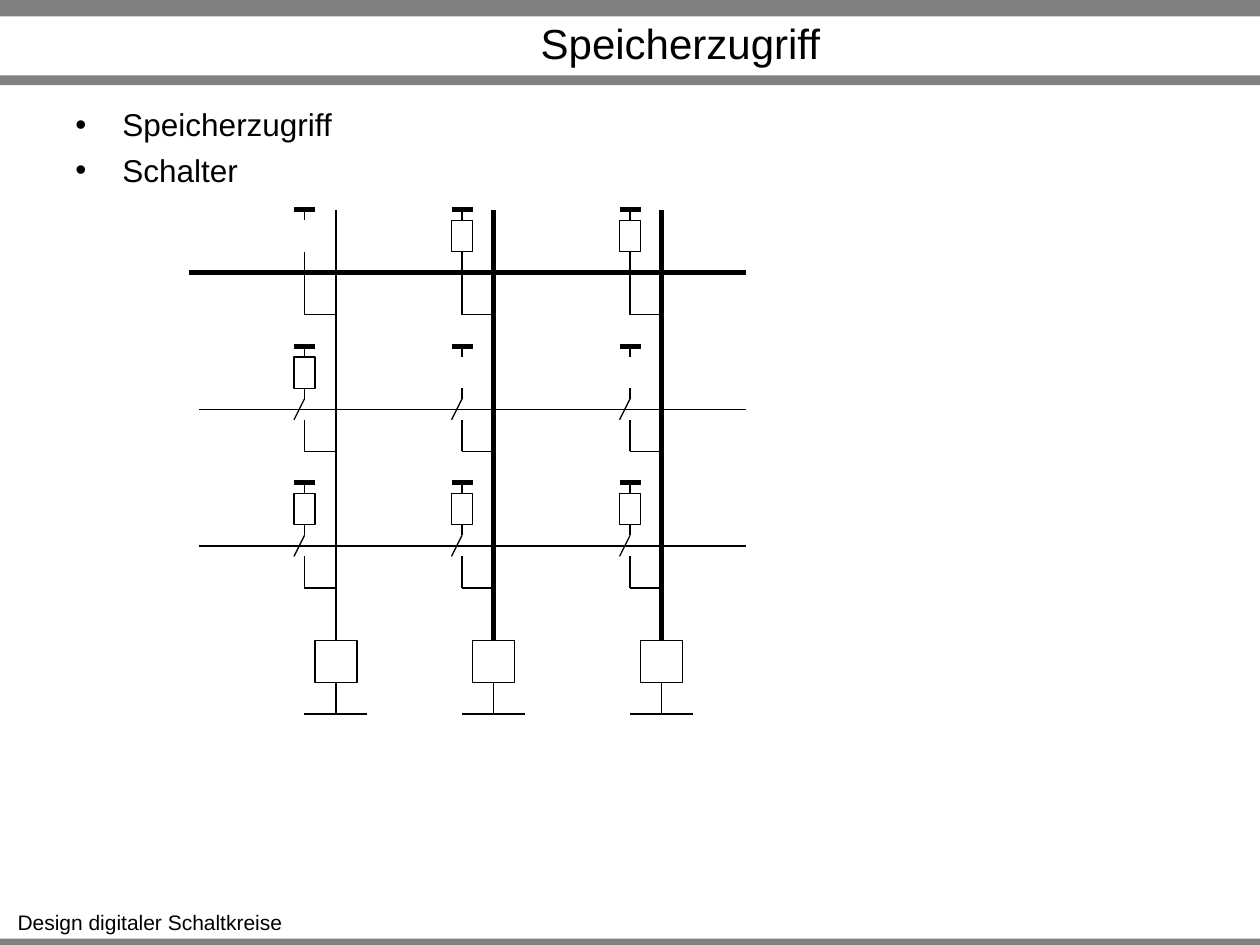
from dataclasses import dataclass

from lxml import etree
from pptx import Presentation
from pptx import util as u
from pptx.dml.color import RGBColor
from pptx.enum import shapes, text
from pptx.oxml import ns


@dataclass(frozen=True)
class Theme:
    """Colours, font, type sizes and line widths of the slide."""
    ink: RGBColor = RGBColor(0x00, 0x00, 0x00)
    bar: RGBColor = RGBColor(0x80, 0x80, 0x80)
    font: str = "Arial"
    title: float = 24
    body: float = 18
    footer: float = 12
    thin: float = 0.75
    thick: float = 3


@dataclass(frozen=True)
class Box:
    """A region in centimetres."""
    left: float
    top: float
    width: float
    height: float

    def lengths(self):
        """Return the four sides as lengths."""
        return [u.Cm(side) for side in (self.left, self.top, self.width, self.height)]


THEME = Theme()
WORD_LINES = [(0, True), (1, False), (1, False)]
BIT_LINES = [(14, False), (29, True), (45, True)]
RESISTORS = [(False, True, True), (True, False, False), (True, True, True)]
ROW_PITCH = 13
GRID_WIDTH = 53


def write(para, content, size, align=None, bullet=None, indent=0, before=0):
    """Format a paragraph and put one span of text in it."""
    if bullet:
        props = para._p.get_or_add_pPr()
        props.set("marL", str(u.Cm(indent)))
        props.set("indent", str(-u.Cm(indent)))
        etree.SubElement(props, ns.qn("a:buFont")).set("typeface", THEME.font)
        etree.SubElement(props, ns.qn("a:buChar")).set("char", bullet)
    para.space_before = u.Pt(before)
    para.alignment = align
    span = para.add_run()
    span.text = content
    span.font.name = THEME.font
    span.font.size = u.Pt(size)
    span.font.color.rgb = THEME.ink


def add_rect(page, box, fill=None):
    """Add a filled bar, or a thinly outlined rectangle."""
    rect = page.shapes.add_shape(shapes.MSO_SHAPE.RECTANGLE, *box.lengths())
    rect.shadow.inherit = False
    if fill is None:
        rect.fill.background()
        rect.line.color.rgb = THEME.ink
        rect.line.width = u.Pt(THEME.thin)
    else:
        rect.fill.solid()
        rect.fill.fore_color.rgb = fill
        rect.line.fill.background()
    return rect


class Circuit:
    """Draws circuit parts on a grid inside a box."""

    def __init__(self, page, box):
        """Fit the grid to the width of the box."""
        self.page, self.box = page, box
        self.step = box.width / GRID_WIDTH

    def wire(self, x1, y1, x2, y2, thick=False, source=None, target=None):
        """Draw a wire, joined below a source or on top of a target."""
        ends = [u.Cm(origin + self.step * value) for origin, value in (
            (self.box.left, x1), (self.box.top, y1),
            (self.box.left, x2), (self.box.top, y2))]
        line = self.page.shapes.add_connector(shapes.MSO_CONNECTOR.STRAIGHT, *ends)
        line.line.color.rgb = THEME.ink
        line.line.width = u.Pt(THEME.thick if thick else THEME.thin)
        etree.SubElement(line._element.spPr, ns.qn("a:effectLst"))
        if source is not None:
            line.begin_connect(source, 2)
        if target is not None:
            line.end_connect(target, 0)

    def rect(self, x, y, width, height):
        """Draw a rectangle given in grid steps."""
        return add_rect(self.page, Box(
            self.box.left + self.step * x, self.box.top + self.step * y,
            self.step * width, self.step * height))

    def cell(self, x, y, has_resistor, closed):
        """Draw a memory cell hanging from its supply at x, y."""
        resistor = self.rect(x - 1, y + 1, 2, 3) if has_resistor else None
        self.wire(x - 1, y, x + 1, y, thick=True)
        self.wire(x, y, x, y + 1, target=resistor)
        self.wire(x, y + 4, x, y + 5, source=resistor)
        self.wire(x, y + 5, x if closed else x - 1, y + 7)
        self.wire(x, y + 7, x, y + 10)
        self.wire(x, y + 10, x + 3, y + 10)

    def column(self, x, active):
        """Draw a bit line with its sense box and ground."""
        sensor = self.rect(x - 2, 41, 4, 4)
        self.wire(x, 0, x, 41, thick=active, target=sensor)
        self.wire(x, 45, x, 48, source=sensor)
        self.wire(x - 3, 48, x + 3, 48)


def draw_memory(page, box):
    """Draw the word lines, bit lines and cells of the memory."""
    circuit = Circuit(page, box)
    for x, active in BIT_LINES:
        circuit.column(x, active)
    for row, (start, selected) in enumerate(WORD_LINES):
        top = row * ROW_PITCH
        circuit.wire(start, top + 6, GRID_WIDTH, top + 6, thick=selected)
        for (x, _), has_resistor in zip(BIT_LINES, RESISTORS[row]):
            circuit.cell(x - 3, top, has_resistor, closed=selected)


def draw_frame(page, box):
    """Draw the grey bars and the footer."""
    for top, height in ((0, 0.33), (1.52, 0.2), (18.92, 0.13)):
        add_rect(page, Box(box.left, box.top + top, box.width, height), THEME.bar)
    footer = page.shapes.add_textbox(
        *Box(box.left + 0.08, box.top + 18.21, 5.89, 0.76).lengths())
    footer.text_frame.word_wrap = False
    write(footer.text_frame.paragraphs[0], "Design digitaler Schaltkreise",
          THEME.footer, align=text.PP_ALIGN.CENTER)


def place_title(page, box, content):
    """Move and format the title placeholder."""
    title = page.shapes.title
    title.left, title.top, title.width, title.height = box.lengths()
    frame = title.text_frame
    frame.auto_size = text.MSO_AUTO_SIZE.NONE
    frame.vertical_anchor = text.MSO_ANCHOR.MIDDLE
    frame.margin_top = frame.margin_bottom = 0
    write(frame.paragraphs[0], content, THEME.title, align=text.PP_ALIGN.CENTER)


def place_bullets(page, box, items):
    """Place a bulleted list."""
    frame = page.shapes.add_textbox(*box.lengths()).text_frame
    frame.word_wrap = True
    for index, item in enumerate(items):
        para = frame.add_paragraph() if index else frame.paragraphs[0]
        write(para, item, THEME.body, bullet="•", indent=0.95,
              before=4.3 if index else 0)


def main():
    """Build and save the deck."""
    deck = Presentation()
    deck.slide_width, deck.slide_height = u.Cm(25.4), u.Cm(19.05)
    page = deck.slides.add_slide(deck.slide_layouts[5])
    draw_frame(page, Box(0, 0, 25.4, 19.05))
    place_title(page, Box(3.3, 0.38, 20.83, 0.97), "Speicherzugriff")
    place_bullets(page, Box(1.27, 2.0, 22.86, 1.68), ["Speicherzugriff", "Schalter"])
    draw_memory(page, Box(3.81, 4.23, 11.22, 10.16))
    deck.save("out.pptx")


if __name__ == "__main__":
    main()
